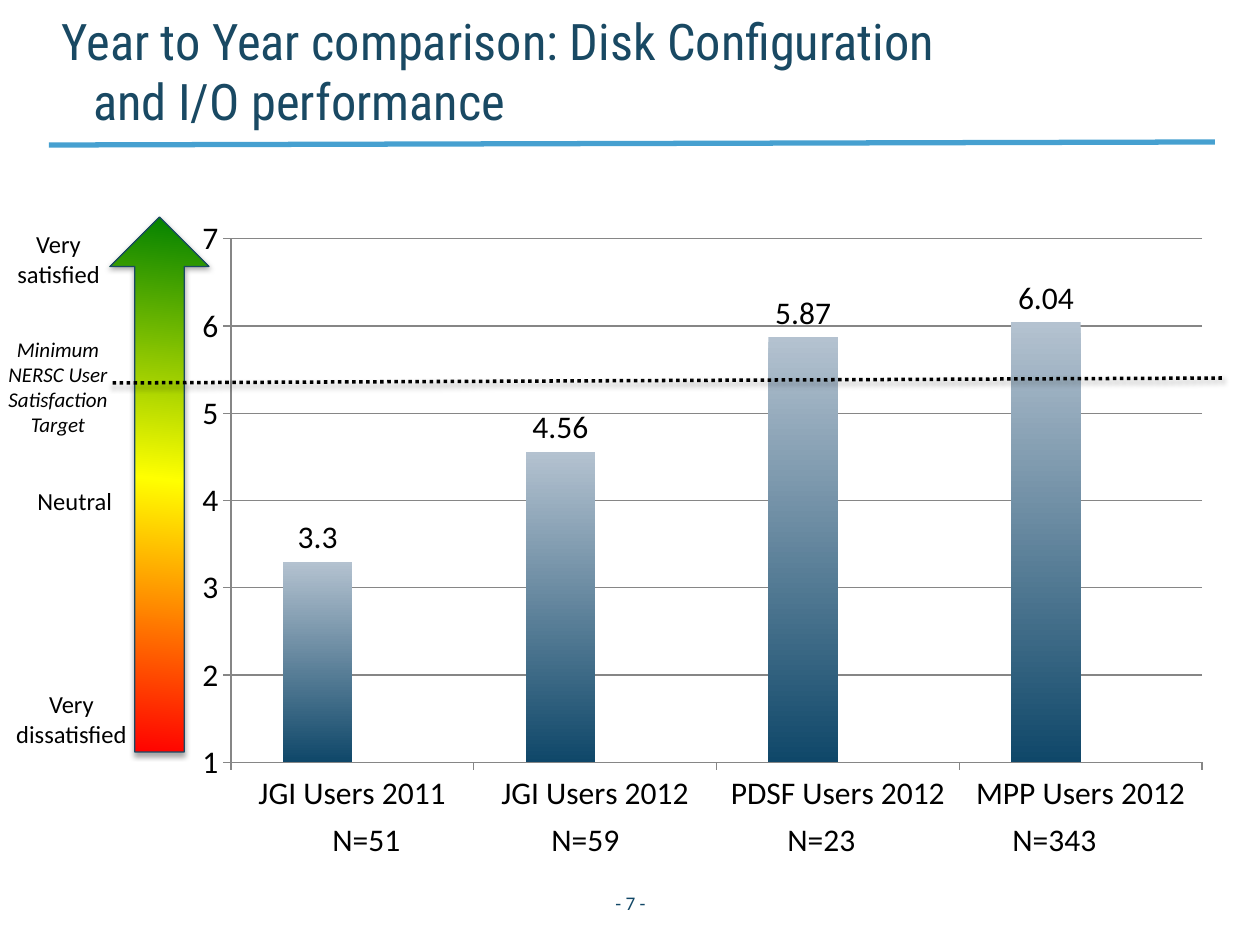
import copy

import pptx
import pptx.chart.data
import pptx.dml.color
import pptx.enum.chart
import pptx.enum.dml
import pptx.enum.shapes
import pptx.enum.text
import pptx.oxml
import pptx.oxml.ns
import pptx.util

RGBColor = pptx.dml.color.RGBColor
ALIGN = pptx.enum.text.PP_ALIGN
ANCHOR = pptx.enum.text.MSO_ANCHOR
qn = pptx.oxml.ns.qn

# Content
TITLE = "Year to Year comparison: Disk Configuration and I/O performance"
RESULTS = [
    ("JGI Users 2011", 3.3),
    ("JGI Users 2012", 4.56),
    ("PDSF Users 2012", 5.87),
    ("MPP Users 2012", 6.04),
]
# Text, left, top, width, height, size, wrapped and centred, italic
LABELS = [
    ("N=51", 320, 814, 95, 50, 18, False, False),
    ("N=59", 539, 814, 95, 50, 18, False, False),
    ("N=23", 775, 814, 95, 50, 18, False, False),
    ("N=343", 1000, 814, 110, 50, 18, False, False),
    ("Very satisfied", -15, 223, 147, 72, 14, True, False),
    ("Very dissatisfied", -11, 683, 165, 72, 14, True, False),
    ("Neutral", 25, 480, 106, 43, 14, False, False),
    ("Minimum NERSC User Satisfaction Target", -19, 330, 154, 115, 12, True, True),
]

# Colours and fonts
BLACK = RGBColor(0x00, 0x00, 0x00)
NAVY = RGBColor(0x19, 0x49, 0x63)
PAGE_BLUE = RGBColor(0x11, 0x47, 0x66)
RULE_BLUE = RGBColor(0x46, 0xA0, 0xD0)
GRID_GREY = RGBColor(0x86, 0x86, 0x86)
BAR_STOPS = [(0, RGBColor(0xB4, 0xC2, 0xD0)), (1, RGBColor(0x0F, 0x47, 0x69))]
SCALE_STOPS = [
    (0, RGBColor(0x00, 0x80, 0x00)),
    (0.49, RGBColor(0xFF, 0xFF, 0x00)),
    (1, RGBColor(0xFF, 0x00, 0x00)),
]
TITLE_FONT = "Roboto Condensed"
BODY_FONT = "Calibri"

PX = 914400 / 126


def px(*lengths):
    return [pptx.util.Emu(round(length * PX)) for length in lengths]


def set_font(font, name, size, color, italic=False):
    font.name = name
    font.size = pptx.util.Pt(size)
    font.color.rgb = color
    font.italic = italic


def add_label(slide, text, box, size, color=BLACK, centred=False, wrap=True,
              italic=False, anchor=ANCHOR.TOP):
    frame = slide.shapes.add_textbox(*px(*box)).text_frame
    frame.word_wrap = wrap
    frame.vertical_anchor = anchor
    paragraph = frame.paragraphs[0]
    paragraph.alignment = ALIGN.CENTER if centred else ALIGN.LEFT
    run = paragraph.add_run()
    run.text = text
    set_font(run.font, BODY_FONT, size, color, italic)


def set_gradient(fill, properties, stops, angle):
    fill.gradient()
    fill.gradient_angle = angle
    stop_list = properties.find(qn("a:gradFill")).find(qn("a:gsLst"))
    while len(stop_list) < len(stops):
        stop_list.append(copy.deepcopy(stop_list[-1]))
    for stop, (position, color) in zip(fill.gradient_stops, stops):
        stop.position = position
        stop.color.rgb = color


def set_effects(shape, shadow_alpha=None):
    """Give the shape a soft shadow below it, or none."""
    properties = shape._element.spPr
    for old in properties.findall(qn("a:effectLst")):
        properties.remove(old)
    shadow = ""
    if shadow_alpha:
        shadow = (
            '<a:outerShdw blurRad="40000" dist="22000" dir="5400000" rotWithShape="0">'
            f'<a:srgbClr val="000000"><a:alpha val="{shadow_alpha * 1000}"/></a:srgbClr>'
            "</a:outerShdw>")
    properties.append(pptx.oxml.parse_xml(
        f'<a:effectLst {pptx.oxml.ns.nsdecls("a")}>{shadow}</a:effectLst>'))


def add_line(slide, ends, color, width):
    line = slide.shapes.add_connector(
        pptx.enum.shapes.MSO_CONNECTOR.STRAIGHT, *px(*ends))
    line.line.color.rgb = color
    line.line.width = pptx.util.Pt(width)
    return line


def add_title(slide):
    title = slide.shapes.title
    title.left, title.top, title.width, title.height = px(49, 25, 940, 106)
    frame = title.text_frame
    frame.word_wrap = True
    frame.auto_size = pptx.enum.text.MSO_AUTO_SIZE.NONE
    frame.vertical_anchor = ANCHOR.BOTTOM
    frame.margin_top = frame.margin_bottom = 0
    paragraph = frame.paragraphs[0]
    paragraph.alignment = ALIGN.LEFT
    indent = pptx.util.Inches(0.25)
    paragraph._p.get_or_add_pPr().set("marL", str(indent))
    paragraph._p.get_or_add_pPr().set("indent", str(-indent))
    run = paragraph.add_run()
    run.text = TITLE
    set_font(run.font, TITLE_FONT, 28.8, NAVY)


def add_satisfaction_chart(slide):
    data = pptx.chart.data.CategoryChartData()
    data.categories = [name for name, score in RESULTS]
    data.add_series("Series 1", [score for name, score in RESULTS])
    data.add_series("Series 2", [None] * len(RESULTS))
    chart = slide.shapes.add_chart(
        pptx.enum.chart.XL_CHART_TYPE.COLUMN_CLUSTERED,
        *px(183, 208, 1041, 616), data).chart
    chart.has_legend = False
    chart.has_title = False
    set_font(chart.font, BODY_FONT, 18, BLACK)

    # Axes
    scale = chart.value_axis
    scale.minimum_scale, scale.maximum_scale, scale.major_unit = 1, 7, 1
    scale.has_major_gridlines = True
    for part in (scale, scale.major_gridlines, chart.category_axis):
        part.format.line.color.rgb = GRID_GREY
        part.format.line.width = pptx.util.Pt(0.75)
    for axis in (scale, chart.category_axis):
        axis.major_tick_mark = pptx.enum.chart.XL_TICK_MARK.OUTSIDE

    # Bars and their values
    plot = chart.plots[0]
    plot.gap_width = 150
    plot.overlap = 0
    plot.vary_by_categories = False
    scores = plot.series[0]
    bar_format = scores.format
    bar_format.fill.solid()
    set_gradient(bar_format.fill, scores._element.spPr, BAR_STOPS, 270)
    labels = scores.data_labels
    labels.show_value = True
    labels.position = pptx.enum.chart.XL_LABEL_POSITION.OUTSIDE_END
    set_font(labels.font, BODY_FONT, 18, BLACK)

    # Inner plot area as shares of the chart
    plot_area = chart._chartSpace.chart.plotArea
    for old in plot_area.findall(qn("c:layout")):
        plot_area.remove(old)
    shares = {"x": 0.046, "y": 0.05, "w": 0.933, "h": 0.85}
    modes = '<c:xMode val="edge"/><c:yMode val="edge"/>'
    sizes = "".join(f'<c:{key} val="{share}"/>' for key, share in shares.items())
    plot_area.insert(0, pptx.oxml.parse_xml(
        f'<c:layout {pptx.oxml.ns.nsdecls("c")}><c:manualLayout>'
        f'<c:layoutTarget val="inner"/>{modes}{sizes}</c:manualLayout></c:layout>'))


def main():
    presentation = pptx.Presentation()
    presentation.slide_width, presentation.slide_height = px(1260, 945)
    slide = presentation.slides.add_slide(presentation.slide_layouts[5])

    # Heading, chart and page number
    set_effects(add_line(slide, (49, 145, 1215, 142), RULE_BLUE, 3))
    add_title(slide)
    add_satisfaction_chart(slide)
    add_label(slide, "- 7 -", (567, 878, 127, 50), 11, PAGE_BLUE,
              centred=True, anchor=ANCHOR.MIDDLE)

    # Satisfaction scale
    arrow = slide.shapes.add_shape(
        pptx.enum.shapes.MSO_SHAPE.UP_ARROW, *px(110, 217, 99, 535))
    set_gradient(arrow.fill, arrow._element.spPr, SCALE_STOPS, 264)
    arrow.line.color.rgb = NAVY
    arrow.line.width = pptx.util.Pt(0.75)
    set_effects(arrow, 35)

    # Target line
    target = add_line(slide, (1222, 378, 111, 383), BLACK, 2)
    target.line.dash_style = pptx.enum.dml.MSO_LINE.ROUND_DOT
    set_effects(target, 38)

    # Sample sizes and scale labels
    for text, left, top, width, height, size, wrapped, italic in LABELS:
        add_label(slide, text, (left, top, width, height), size,
                  centred=wrapped, wrap=wrapped, italic=italic)

    presentation.save("out.pptx")


if __name__ == "__main__":
    main()
